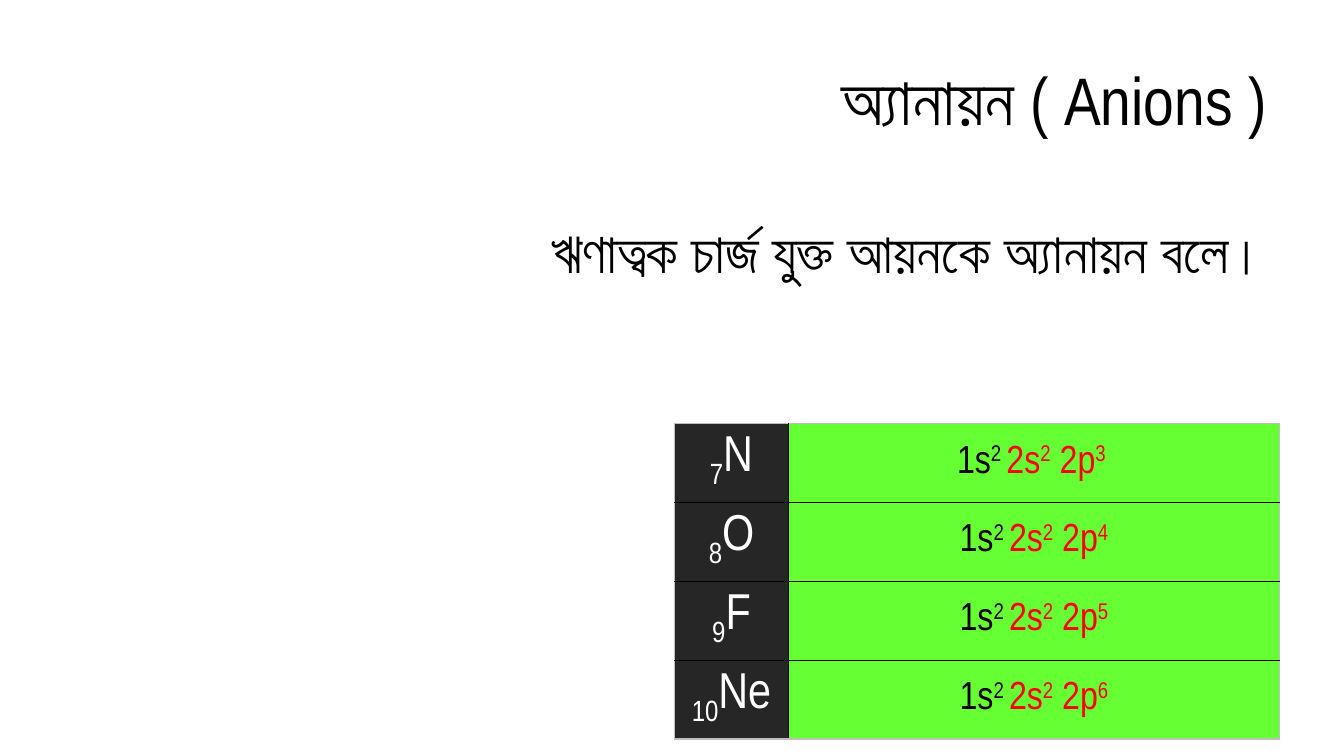
from lxml import etree
from pptx import Presentation
from pptx.dml.color import RGBColor
from pptx.enum import text
from pptx.oxml import ns
from pptx.util import Inches, Pt

BLACK, WHITE, RED = "000000", "FFFFFF", "FF0000"
DARK, GREEN, GREY = "262626", "66FF33", "BFBFBF"
NARROW = "Arial Narrow"
SUBSCRIPT, SUPERSCRIPT = -25000, 30000


def add_run(paragraph, words, size, color=BLACK, font=NARROW, baseline=0):
    run = paragraph.add_run()
    run.text = words
    run.font.size = Pt(size)
    run.font.name = font
    run.font.color.rgb = RGBColor.from_string(color)
    if baseline:
        run.font._element.set("baseline", str(baseline))


def add_border(cell, side, color):
    """Draw a 1 pt line on one side (L, R, T or B) of a table cell."""
    properties = cell._tc.get_or_add_tcPr()
    line = etree.SubElement(properties, ns.qn(f"a:ln{side}"), w=str(Pt(1)))
    fill = etree.SubElement(line, ns.qn("a:solidFill"))
    etree.SubElement(fill, ns.qn("a:srgbClr"), val=color)


presentation = Presentation()
presentation.slide_width = Inches(13.33)
presentation.slide_height = Inches(7.5)
slide = presentation.slides.add_slide(presentation.slide_layouts[6])

# Title and definition
box = slide.shapes.add_textbox(Inches(4.58), Inches(0.53), Inches(8.08), Inches(2.39))
frame = box.text_frame
frame.word_wrap = True
title = frame.paragraphs[0]
title.alignment = text.PP_ALIGN.RIGHT
for words, font in [("অ্যানা", NARROW), ("য়ন ", "Arial"), ("( Anions )", NARROW)]:
    add_run(title, words, 48, font=font)

definition = frame.add_paragraph()
definition.alignment = text.PP_ALIGN.RIGHT
definition.space_before = Pt(56)
for words, font in [("ঋণাত্বক চার্জ যুক্ত আয়নকে ", "Arial"), ("অ্যানা", NARROW),
                    ("য়ন বলে।", "Arial")]:
    add_run(definition, words, 40, font=font)

# Electron configurations
elements = [("7", "N", "3 "), ("8", "O", "4"), ("9", "F", "5"), ("10", "Ne", "6")]
row_height = 0.78
table = slide.shapes.add_table(len(elements), 2, Inches(6.69), Inches(4.2), Inches(6),
                               Inches(row_height * len(elements))).table
table.first_row = False
table.horz_banding = False
table.columns[0].width = Inches(1.13)
table.columns[1].width = Inches(4.87)

for row, (number, symbol, p_electrons) in enumerate(elements):
    table.rows[row].height = Inches(row_height)
    element_runs = [(number, WHITE, SUBSCRIPT), (symbol, WHITE, 0)]
    shell_runs = [("1s", BLACK, 0), ("2 ", BLACK, SUPERSCRIPT), ("2s", RED, 0),
                  ("2", RED, SUPERSCRIPT), (" 2p", RED, 0), (p_electrons, RED, SUPERSCRIPT)]
    for column, (runs, size, background) in enumerate(
            [(element_runs, 36, DARK), (shell_runs, 28, GREEN)]):
        cell = table.cell(row, column)
        outer = {"L": column == 0, "R": column == 1,
                 "T": row == 0, "B": row == len(elements) - 1}
        for side, is_outer in outer.items():
            add_border(cell, side, GREY if is_outer else BLACK)
        cell.fill.solid()
        cell.fill.fore_color.rgb = RGBColor.from_string(background)
        cell.vertical_anchor = text.MSO_ANCHOR.MIDDLE
        paragraph = cell.text_frame.paragraphs[0]
        paragraph.alignment = text.PP_ALIGN.CENTER
        for words, color, baseline in runs:
            add_run(paragraph, words, size, color, baseline=baseline)

presentation.save("out.pptx")
